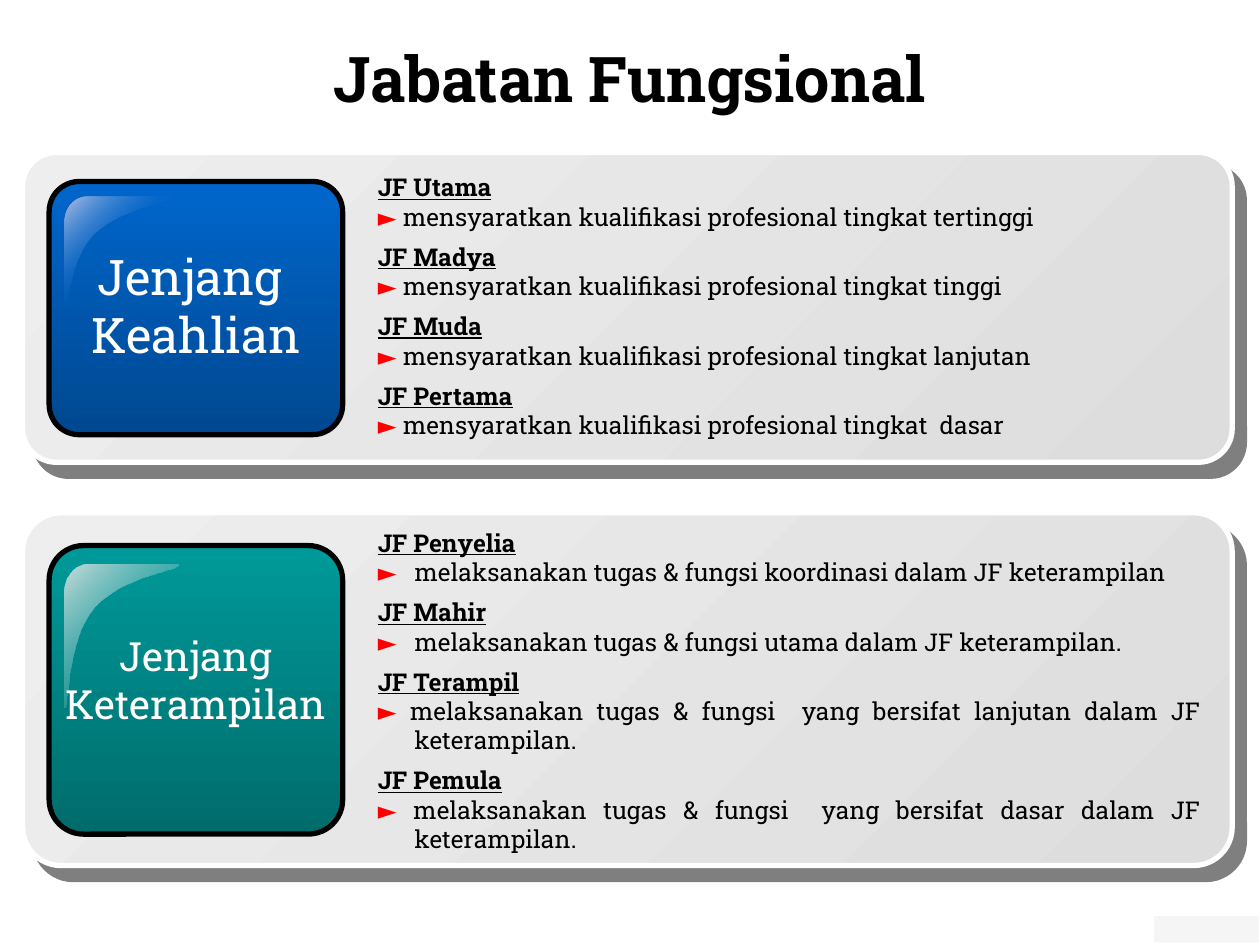
import pptx
import pptx.util
import pptx.dml.color
import pptx.enum.text
import pptx.enum.shapes
import pptx.oxml
import pptx.oxml.ns

Inches, Pt = pptx.util.Inches, pptx.util.Pt
ALIGN, ANCHOR = pptx.enum.text.PP_ALIGN, pptx.enum.text.MSO_ANCHOR
GROW = pptx.enum.text.MSO_AUTO_SIZE.SHAPE_TO_FIT_TEXT
SHAPE = pptx.enum.shapes.MSO_SHAPE
FONT = "Roboto Slab"

TITLE = "Jabatan Fungsional"
LEVELS = [
    {
        "panel": (0.18, 1.21, 9.6, 2.46),
        "tile": (0.39, 1.44, 2.33, 2.01),
        "tones": ("0066CC", "004890"),
        "gloss": (0.51, 1.56, 1.01),
        "tint": ("B5C0E5", 0.5),
        "label": (["Jenjang ", "Keahlian"], 28, (0.39, 1.9, 2.33, 1.04), ANCHOR.MIDDLE),
        "body": (2.9, 1.32, 5.66, 2.24),
        "hang": 0,
        "items": [
            ("JF Utama", "► ", "mensyaratkan kualifikasi profesional tingkat tertinggi"),
            ("JF Madya", "► ", "mensyaratkan kualifikasi profesional tingkat tinggi"),
            ("JF Muda", "► ", "mensyaratkan kualifikasi profesional tingkat lanjutan"),
            ("JF Pertama", "► ", "mensyaratkan kualifikasi profesional tingkat  dasar"),
        ],
    },
    {
        "panel": (0.18, 4.07, 9.6, 2.8),
        "tile": (0.39, 4.33, 2.33, 2.29),
        "tones": ("009999", "006C6C"),
        "gloss": (0.51, 4.48, 1.15),
        "tint": ("C9DBDB", 1),
        "label": (["Jenjang", "Keterampilan"], 23, (0.39, 4.96, 2.33, 0.97), ANCHOR.TOP),
        "body": (2.9, 4.14, 6.73, 3.02),
        "hang": 0.29,
        "items": [
            ("JF Penyelia", "► \t", "melaksanakan tugas & fungsi koordinasi dalam JF keterampilan"),
            ("JF Mahir", "► \t", "melaksanakan tugas & fungsi utama dalam JF keterampilan."),
            ("JF Terampil", "► ",
             "melaksanakan tugas & fungsi  yang bersifat lanjutan dalam JF keterampilan."),
            ("JF Pemula", "► ",
             "melaksanakan tugas & fungsi  yang bersifat dasar dalam JF keterampilan."),
        ],
    },
]
CURVES = [
    [(0.18, 0), (0.08, 0), (0, 0.09), (0, 0.2)],
    [(0, 1), (0.04, 1.01), (0.01, 0.53), (0.24, 0.3)],
    [(0.24, 0.3), (0.48, 0.07), (0.92, 0.05), (0.91, 0)],
]


def rgb(code):
    return pptx.dml.color.RGBColor.from_string(code)


def box(at):
    return [Inches(n) for n in at]


def shade(shape, tones, angle, end=1):
    fill = shape.fill
    fill.gradient()
    fill.gradient_angle = 360 - angle
    for stop, tone, place in zip(fill.gradient_stops, tones, (0, end)):
        stop.color.rgb = rgb(tone)
        stop.position = place


def card(group, at, adj, tones, angle, line):
    shape = group.shapes.add_shape(SHAPE.ROUNDED_RECTANGLE, *box(at))
    shape.adjustments[0] = adj
    shape.shadow.inherit = False
    shade(shape, tones, angle)
    shape.line.color.rgb = rgb(line)
    shape.line.width = Pt(3)
    return shape


def cast(shape):
    effects = shape._element.spPr.find(pptx.oxml.ns.qn("a:effectLst"))
    effects.append(pptx.oxml.parse_xml(
        f'<a:outerShdw {pptx.oxml.ns.nsdecls("a")} dist="{Pt(10.6)}" dir="{49 * 60000}" '
        'algn="ctr" rotWithShape="0"><a:srgbClr val="000000">'
        '<a:alpha val="50000"/></a:srgbClr></a:outerShdw>'))


def bend(curve, steps=16):
    for i in range(steps + 1):
        t = i / steps
        parts = ((1 - t) ** 3, 3 * t * (1 - t) ** 2, 3 * t * t * (1 - t), t ** 3)
        yield tuple(sum(w * p[k] for w, p in zip(parts, curve)) for k in (0, 1))


def shine(group, left, top, high, tint, tone):
    dots = [(Inches(left + x), Inches(top + y * high / 1.01))
            for curve in CURVES for x, y in bend(curve)]
    pen = group.shapes.build_freeform(*dots[0])
    pen.add_line_segments(dots[1:], close=True)
    shape = pen.convert_to_shape()
    shape.shadow.inherit = False
    shape.line.fill.background()
    shade(shape, (tint[0], tone), 45, tint[1])
    last = shape._element.spPr.xpath(".//a:gs/a:srgbClr")[-1]
    last.append(pptx.oxml.parse_xml(f'<a:alpha {pptx.oxml.ns.nsdecls("a")} val="0"/>'))


def frame(owner, at, anchor=ANCHOR.TOP):
    text = owner.shapes.add_textbox(*box(at)).text_frame
    text.word_wrap = True
    text.vertical_anchor = anchor
    return text


def style(font, size, color, bold=False):
    font.name, font.size, font.bold = FONT, Pt(size), bold
    font.color.rgb = rgb(color)


def lines(text):
    yield text.paragraphs[0]
    while True:
        yield text.add_paragraph()


def center(text, words, size, color, bold=False):
    for word, para in zip(words, lines(text)):
        para.text = word
        para.alignment = ALIGN.CENTER
        style(para.font, size, color, bold)


def listing(text, items, hang):
    feed = lines(text)
    for name, mark, words in items:
        head, para = next(feed), next(feed)
        head.text = name
        style(head.font, 14, "000000", True)
        head.font.underline = True
        if hang:
            props = para._p.get_or_add_pPr()
            props.set("marL", str(Inches(hang)))
            props.set("indent", str(-Inches(hang)))
        para.space_after = Pt(6)
        style(para.font, 14, "000000")
        for part, color in ((mark, "FF0000"), (words, "000000")):
            run = para.add_run()
            run.text = part
            style(run.font, 14, color)
        head.alignment = para.alignment = ALIGN.JUSTIFY


def main():
    deck = pptx.Presentation()
    deck.slide_width, deck.slide_height = Inches(10), Inches(7.5)
    slide = deck.slides.add_slide(deck.slide_layouts[6])

    strip = slide.shapes.add_shape(SHAPE.RECTANGLE, *box((9.16, 7.27, 0.83, 0.21)))
    strip.shadow.inherit = False
    strip.fill.solid()
    strip.fill.fore_color.rgb = rgb("F5F5F5")
    strip.line.fill.background()

    center(frame(slide, (0, 0, 10, 1.23), ANCHOR.MIDDLE), [TITLE], 36, "000000", True)
    for level in LEVELS:
        group = slide.shapes.add_group_shape()
        cast(card(group, level["panel"], 0.109, ("EEEEEE", "DDDDDD"), 45, "FFFFFF"))
        card(group, level["tile"], 0.119, level["tones"], 90, "000000")
        shine(group, *level["gloss"], level["tint"], level["tones"][0])
        words, size, at, anchor = level["label"]
        label = frame(group, at, anchor)
        center(label, words, size, "FFFFFF")
        body = frame(group, level["body"])
        listing(body, level["items"], level["hang"])
        label.auto_size = body.auto_size = GROW
    deck.save("out.pptx")


if __name__ == "__main__":
    main()
